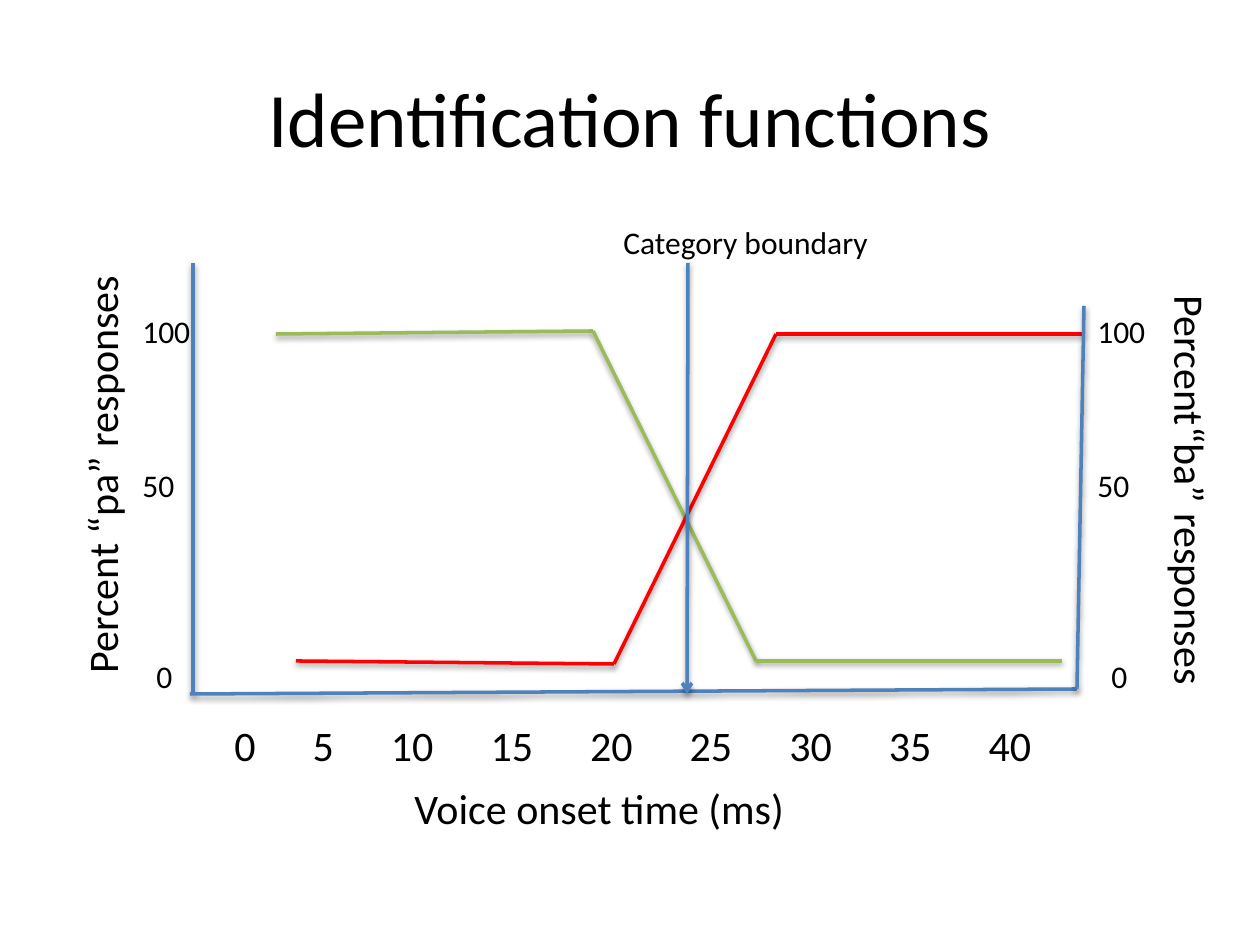
from itertools import pairwise

from lxml import etree
from pptx import Presentation
from pptx import util as u
from pptx.dml.color import RGBColor
from pptx.enum import shapes, text
from pptx.oxml import parse_xml
from pptx.oxml.ns import nsdecls, qn

PX = 914400 / 126
BLUE, GREEN, RED, BLACK = "4F81BD", "9BBB59", "FF0000", "000000"
FONT = "Calibri"

TITLE = ("Identification functions", (63, 38, 1134, 157), 44, 0)
LABELS = [
    ("Voice onset time (ms)", (402, 776, 398, 63), 24, 0),
    ("Percent “pa” responses", (-112, 441, 427, 63), 24, 270),
    ("Percent“ba” responses", (982, 461, 418, 63), 24, 90),
    ("Category boundary", (611, 217, 273, 50), 18, 0),
]

ONSET_TIMES = ["0", "5", "10", "15", "20", "25", "30", "35", "40"]
ONSET_BOX = (222, 713, 883, 63)
DIGIT_WIDTH, TICK_GAP = 21.3, 57

PERCENT_TICKS = [("100", 0, 0), ("50", 66, 0), ("0", 88, 14)]
PERCENT_LEFTS = [130, 1085]
PERCENT_TOP, PERCENT_WIDTH, PERCENT_HEIGHT = 306, 90, 394

LINES = [
    (BLUE, [(193, 263), (193, 694)], False),
    (BLUE, [(1077, 689), (190, 694)], False),
    (GREEN, [(276, 334), (593, 331), (756, 661), (1062, 661)], False),
    (RED, [(296, 661), (614, 664), (776, 334), (1084, 334)], False),
    (BLUE, [(1084, 306), (1077, 689)], False),
    (BLUE, [(688, 263), (687, 694)], True),
]

SHADOW = (
    f'<a:effectLst {nsdecls("a")}>'
    '<a:outerShdw blurRad="40000" dist="20000" dir="5400000" rotWithShape="0">'
    '<a:srgbClr val="000000"><a:alpha val="38000"/></a:srgbClr>'
    "</a:outerShdw></a:effectLst>"
)


def emu(px):
    return u.Emu(round(px * PX))


def color(value):
    return RGBColor.from_string(value)


def add_box(slide, box, **frame_format):
    shape = slide.shapes.add_textbox(*map(emu, box))
    for name, value in {"word_wrap": True, **frame_format}.items():
        setattr(shape.text_frame, name, value)
    return shape


def write(paragraph, words, size, **paragraph_format):
    run = paragraph.add_run()
    run.text = words
    for name, value in {"name": FONT, "size": u.Pt(size)}.items():
        setattr(run.font, name, value)
    run.font.color.rgb = color(BLACK)
    for name, value in paragraph_format.items():
        setattr(paragraph, name, value)


def add_label(slide, words, box, size, rotation, **frame_format):
    shape = add_box(slide, box, **frame_format)
    shape.rotation = rotation
    write(shape.text_frame.paragraphs[0], words, size)
    return shape


def add_onset_ticks(slide):
    paragraph = add_box(slide, ONSET_BOX).text_frame.paragraphs[0]
    write(paragraph, "\t".join(ONSET_TIMES), 24)
    tabs = etree.SubElement(paragraph._p.get_or_add_pPr(), qn("a:tabLst"))
    position = 0
    for tick in ONSET_TIMES[:-1]:
        position += len(tick) * DIGIT_WIDTH + TICK_GAP
        etree.SubElement(tabs, qn("a:tab"), pos=str(emu(position)), algn="l")


def add_percent_ticks(slide, left):
    box = (left, PERCENT_TOP, PERCENT_WIDTH, PERCENT_HEIGHT)
    frame = add_box(slide, box).text_frame
    for index, (tick, space, indent) in enumerate(PERCENT_TICKS):
        paragraph = frame.add_paragraph() if index else frame.paragraphs[0]
        write(paragraph, tick, 18, space_before=u.Pt(space))
        paragraph._p.get_or_add_pPr().set("marL", str(emu(indent)))


def add_segment(slide, start, end, line_color, arrow):
    connector = slide.shapes.add_connector(
        shapes.MSO_CONNECTOR.STRAIGHT, *map(emu, start + end)
    )
    connector.line.color.rgb = color(line_color)
    connector.line.width = u.Pt(2)
    if arrow:
        etree.SubElement(connector.line._get_or_add_ln(), qn("a:tailEnd"), type="arrow")
    connector._element.spPr.append(parse_xml(SHADOW))


def main():
    presentation = Presentation()
    presentation.slide_width, presentation.slide_height = emu(1260), emu(945)
    slide = presentation.slides.add_slide(presentation.slide_layouts[6])

    title = add_label(slide, *TITLE, vertical_anchor=text.MSO_ANCHOR.MIDDLE)
    title.text_frame.paragraphs[0].alignment = text.PP_ALIGN.CENTER
    for label in LABELS:
        add_label(slide, *label)
    add_onset_ticks(slide)
    for left in PERCENT_LEFTS:
        add_percent_ticks(slide, left)
    for line_color, points, arrow in LINES:
        for start, end in pairwise(points):
            add_segment(slide, start, end, line_color, arrow)

    presentation.save("out.pptx")


if __name__ == "__main__":
    main()
